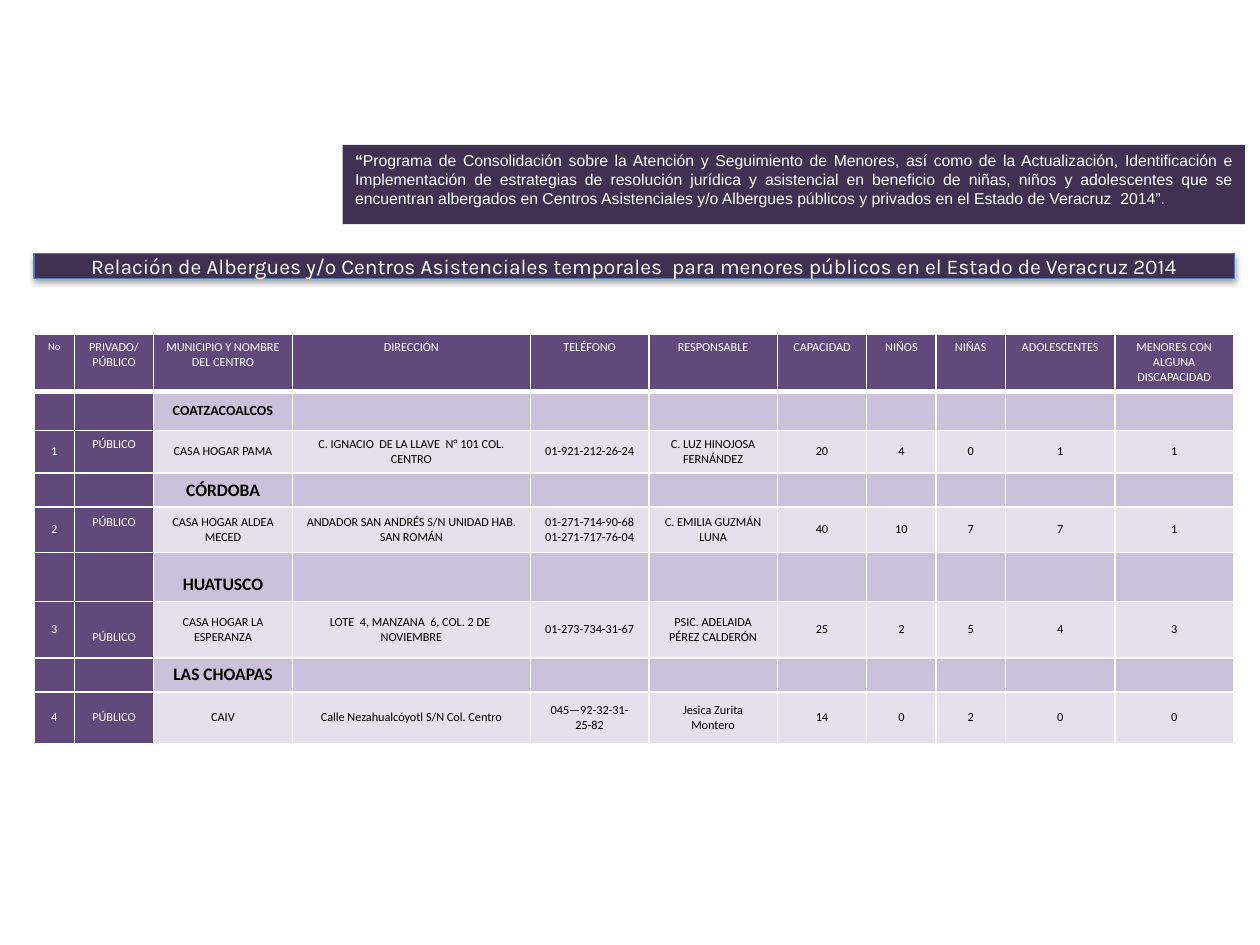
from dataclasses import dataclass

from lxml.etree import SubElement
from pptx import Presentation
from pptx.dml.color import RGBColor
from pptx.enum.shapes import MSO_SHAPE
from pptx.enum.text import MSO_ANCHOR as Anchor, MSO_AUTO_SIZE as AutoSize, PP_ALIGN as Align
from pptx.oxml.ns import qn
from pptx.slide import Slide
from pptx.table import _Cell as Cell
from pptx.util import Inches, Pt

WHITE = RGBColor(0xFF, 0xFF, 0xFF)
BLACK = RGBColor(0, 0, 0)
DARK_PURPLE = RGBColor(0x40, 0x31, 0x52)
PURPLE = RGBColor(0x60, 0x4A, 0x7B)
LILAC = RGBColor(0xCC, 0xC1, 0xDA)
PALE_LILAC = RGBColor(0xE6, 0xE0, 0xEC)
BLUE = RGBColor(0x4B, 0x7E, 0xBC)

TITLE = ("Relación de Albergues y/o Centros Asistenciales temporales  "
         "para menores públicos en el Estado de Veracruz 2014")
PROGRAM = (
    "Programa de Consolidación sobre la Atención y Seguimiento de Menores, así como de la "
    "Actualización, Identificación e Implementación de estrategias de resolución jurídica y "
    "asistencial en beneficio de niñas, niños y adolescentes que se encuentran albergados en "
    "Centros Asistenciales y/o Albergues públicos y privados en el Estado de Veracruz  2014”.")

COLUMNS = [
    ("No", 0.32), ("PRIVADO/PÚBLICO", 0.63), ("MUNICIPIO Y NOMBRE DEL CENTRO", 1.1),
    ("DIRECCIÓN", 1.89), ("TELÉFONO", 0.94), ("RESPONSABLE", 1.02), ("CAPACIDAD", 0.71),
    ("NIÑOS", 0.55), ("NIÑAS", 0.55), ("ADOLESCENTES", 0.87),
    ("MENORES CON ALGUNA DISCAPACIDAD", 0.94),
]
HEADER_HEIGHT = 0.45
BLANK_LINE = 0.12


@dataclass
class Style:
    fill: RGBColor
    color: RGBColor
    size: float = 7
    bold: bool = False
    anchor: Anchor = Anchor.MIDDLE
    extra_top: float = 0
    extra_bottom: float = 0
    bottom_border: float = 1


@dataclass
class Shelter:
    town: str
    town_size: float
    town_height: float
    height: float
    values: list[str]
    town_drop: float = 0
    kind_drop: float = 0
    kind_lift: float = 0


SHELTERS = [
    Shelter("COATZACOALCOS", 8, 0.31, 0.33, [
        "CASA HOGAR PAMA", "C. IGNACIO  DE LA LLAVE  N° 101 COL. CENTRO",
        "01-921-212-26-24", "C. LUZ HINOJOSA FERNÁNDEZ", "20", "4", "0", "1", "1"],
        kind_lift=BLANK_LINE),
    Shelter("CÓRDOBA", 10, 0.27, 0.36, [
        "CASA HOGAR ALDEA MECED", "ANDADOR SAN ANDRÉS S/N UNIDAD HAB. SAN ROMÁN",
        "01-271-714-90-68\n01-271-717-76-04", "C. EMILIA GUZMÁN LUNA",
        "40", "10", "7", "7", "1"], kind_lift=BLANK_LINE),
    Shelter("HUATUSCO", 10, 0.38, 0.45, [
        "CASA HOGAR LA ESPERANZA", "LOTE  4, MANZANA  6, COL. 2 DE  NOVIEMBRE",
        "01-273-734-31-67", "PSIC. ADELAIDA PÉREZ CALDERÓN", "25", "2", "5", "4", "3"],
        town_drop=BLANK_LINE, kind_drop=BLANK_LINE),
    Shelter("LAS CHOAPAS", 10, 0.27, 0.41, [
        "CAIV", "Calle Nezahualcóyotl S/N Col. Centro", "045—92-32-31-25-82",
        "Jesica Zurita Montero", "14", "0", "2", "0", "0"]),
]


def add_run(paragraph, text: str, font: str, size: float, color: RGBColor, bold: bool = False):
    run = paragraph.add_run()
    run.text = text
    run.font.name = font
    run.font.size = Pt(size)
    run.font.bold = bold
    run.font.color.rgb = color


def add_borders(cell: Cell, bottom_width: float):
    properties = cell._tc.get_or_add_tcPr()
    for side, width in (("L", 1), ("R", 1), ("T", 1), ("B", bottom_width)):
        line = SubElement(properties, qn(f"a:ln{side}"), w=str(Pt(width)))
        fill = SubElement(line, qn("a:solidFill"))
        SubElement(fill, qn("a:srgbClr"), val=str(WHITE))


def fill_cell(cell: Cell, text: str, style: Style):
    add_borders(cell, style.bottom_border)
    cell.fill.solid()
    cell.fill.fore_color.rgb = style.fill
    cell.vertical_anchor = style.anchor
    cell.margin_left = cell.margin_right = Inches(0.1)
    cell.margin_top = Inches(0.05 + style.extra_top)
    cell.margin_bottom = Inches(0.05 + style.extra_bottom)
    frame = cell.text_frame
    for index, line in enumerate(text.split("\n")):
        paragraph = frame.add_paragraph() if index else frame.paragraphs[0]
        paragraph.alignment = Align.CENTER
        if line:
            add_run(paragraph, line, "Calibri", style.size, style.color, style.bold)
        else:
            SubElement(paragraph._p, qn("a:endParaRPr"), sz=str(int(style.size * 100)))


def add_title(slide: Slide):
    title = slide.shapes.title
    title.left, title.top = Inches(0.27), Inches(2.01)
    title.width, title.height = Inches(9.53), Inches(0.2)
    title.fill.solid()
    title.fill.fore_color.rgb = DARK_PURPLE
    title.line.color.rgb = BLUE
    title.line.width = Pt(0.75)
    effects = SubElement(title._element.spPr, qn("a:effectLst"))
    shadow = SubElement(effects, qn("a:outerShdw"), blurRad=str(Pt(3.1)), dist=str(Pt(1.8)),
                        dir="5400000", rotWithShape="0")
    color = SubElement(shadow, qn("a:srgbClr"), val=str(BLACK))
    SubElement(color, qn("a:alpha"), val="35000")
    frame = title.text_frame
    frame.auto_size = AutoSize.NONE
    frame.word_wrap = True
    frame.vertical_anchor = Anchor.MIDDLE
    paragraph = frame.paragraphs[0]
    paragraph.alignment = Align.CENTER
    add_run(paragraph, TITLE, "Karla", 12, WHITE)


def add_shelter_table(slide: Slide):
    heights = [HEADER_HEIGHT]
    for shelter in SHELTERS:
        heights += [shelter.town_height, shelter.height]
    widths = [width for _, width in COLUMNS]
    table = slide.shapes.add_table(
        len(heights), len(COLUMNS), Inches(0.27), Inches(2.65),
        Inches(sum(widths)), Inches(sum(heights))).table
    table.horz_banding = False
    for column, width in zip(table.columns, widths):
        column.width = Inches(width)
    for row, height in zip(table.rows, heights):
        row.height = Inches(height)

    for index, (heading, _) in enumerate(COLUMNS):
        size = 7 if index else 6
        fill_cell(table.cell(0, index), heading,
                  Style(PURPLE, WHITE, size, anchor=Anchor.TOP, bottom_border=3))

    side = Style(PURPLE, WHITE)
    body = Style(PALE_LILAC, BLACK)
    for number, shelter in enumerate(SHELTERS, 1):
        town = Style(LILAC, BLACK, shelter.town_size, True, extra_top=shelter.town_drop)
        kind = Style(PURPLE, WHITE, extra_top=shelter.kind_drop, extra_bottom=shelter.kind_lift)
        town_texts = ["", "", shelter.town] + [""] * (len(COLUMNS) - 3)
        town_styles = [side, side, town] + [Style(LILAC, BLACK)] * (len(COLUMNS) - 3)
        texts = [str(number), "PÚBLICO"] + shelter.values
        styles = [side, kind] + [body] * len(shelter.values)
        for index in range(len(COLUMNS)):
            fill_cell(table.cell(2 * number - 1, index), town_texts[index], town_styles[index])
            fill_cell(table.cell(2 * number, index), texts[index], styles[index])


def add_program(slide: Slide):
    shape = slide.shapes.add_shape(
        MSO_SHAPE.RECTANGLE, Inches(2.72), Inches(1.15), Inches(7.16), Inches(0.63))
    shape.shadow.inherit = False
    shape.fill.solid()
    shape.fill.fore_color.rgb = DARK_PURPLE
    shape.line.fill.background()
    frame = shape.text_frame
    frame.word_wrap = True
    frame.vertical_anchor = Anchor.TOP
    paragraph = frame.paragraphs[0]
    paragraph.alignment = Align.JUSTIFY
    add_run(paragraph, "“", "Arial", 9, WHITE, True)
    add_run(paragraph, PROGRAM, "Arial", 9, WHITE)


def main():
    presentation = Presentation()
    presentation.slide_width, presentation.slide_height = Inches(10), Inches(7.5)
    slide = presentation.slides.add_slide(presentation.slide_layouts[5])
    add_title(slide)
    add_shelter_table(slide)
    add_program(slide)
    presentation.save("out.pptx")


if __name__ == "__main__":
    main()
